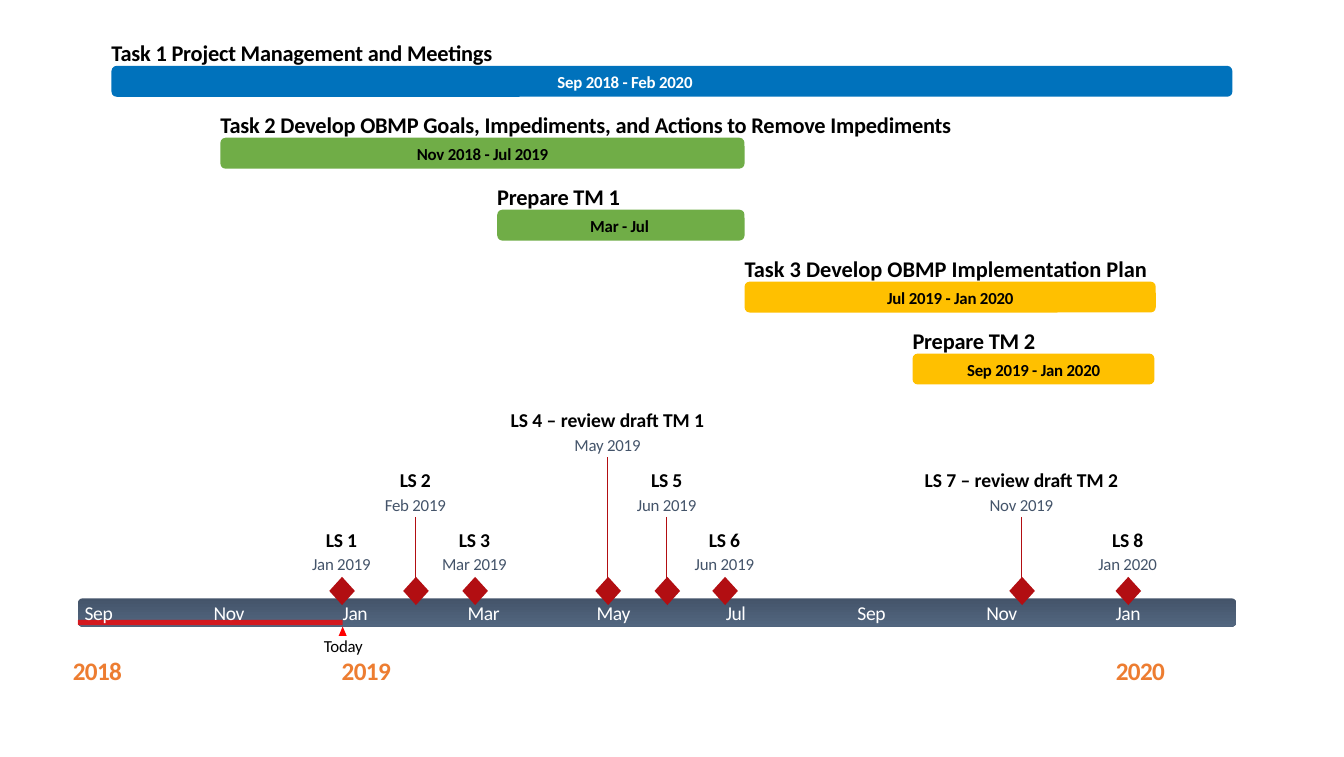
from typing import NamedTuple

from lxml import etree
from pptx import Presentation
from pptx.dml.color import RGBColor
from pptx.enum.shapes import MSO_CONNECTOR, MSO_SHAPE
from pptx.enum.text import MSO_ANCHOR, MSO_AUTO_SIZE, PP_ALIGN
from pptx.oxml.ns import qn
from pptx.shapes.autoshape import Shape
from pptx.slide import Slide
from pptx.util import Inches, Pt

STRAIGHT = MSO_CONNECTOR.STRAIGHT
ROUNDED = MSO_SHAPE.ROUNDED_RECTANGLE
DIAMOND = MSO_SHAPE.DIAMOND
TRIANGLE = MSO_SHAPE.ISOSCELES_TRIANGLE
MIDDLE = MSO_ANCHOR.MIDDLE
FIT = MSO_AUTO_SIZE.SHAPE_TO_FIT_TEXT
FIXED = MSO_AUTO_SIZE.NONE
LEFT = PP_ALIGN.LEFT
CENTER = PP_ALIGN.CENTER

BLACK = RGBColor(0x00, 0x00, 0x00)
WHITE = RGBColor(0xFF, 0xFF, 0xFF)
SLATE = RGBColor(0x44, 0x54, 0x6A)
LIGHT_SLATE = RGBColor(0x52, 0x66, 0x7F)
ORANGE = RGBColor(0xED, 0x7D, 0x31)
RED = RGBColor(0xFF, 0x00, 0x00)
DARK_RED = RGBColor(0xB2, 0x0E, 0x12)
BLUE = RGBColor(0x00, 0x72, 0xBC)
GREEN = RGBColor(0x70, 0xAD, 0x47)
YELLOW = RGBColor(0xFF, 0xC0, 0x00)

FONT = "Calibri"
FIRST_BAR_TOP = 0.49
BAR_PITCH = 0.535
BAR_HEIGHT = 0.23
NAME_TOP = 3.92
LEVEL_HEIGHT = 0.445
DIAMOND_MIDDLE = 4.4


class TextStyle(NamedTuple):
    size: float
    color: RGBColor
    bold: bool = False
    align: PP_ALIGN = CENTER
    spacing: int = -10
    wrap: bool = True
    fit: bool = True


class Task(NamedTuple):
    title: str
    title_width: float
    title_spacing: int
    dates: str
    left: float
    width: float
    dates_center: float
    fill: RGBColor
    text_color: RGBColor


class Milestone(NamedTuple):
    name: str
    date: str
    center: float
    level: int
    name_width: float = 0.78
    spacing: int = -10


class Label(NamedTuple):
    text: str
    left: float
    width: float


TASKS = [
    Task("Task 1 Project Management and Meetings", 2.9, -10,
         "Sep 2018 - Feb 2020", 0.83, 8.34, 4.65, BLUE, WHITE),
    Task("Task 2 Develop OBMP Goals, Impediments, and Actions to Remove Impediments", 5.56, -10,
         "Nov 2018 - Jul 2019", 1.64, 3.9, 3.59, GREEN, BLACK),
    Task("Prepare TM 1", 5.56, -10,
         "Mar - Jul", 3.7, 1.84, 4.61, GREEN, BLACK),
    Task("Task 3 Develop OBMP Implementation Plan", 3, 0,
         "Jul 2019 - Jan 2020", 5.54, 3.06, 7.07, YELLOW, BLACK),
    Task("Prepare TM 2", 1.8, -10,
         "Sep 2019 - Jan 2020", 6.79, 1.8, 7.69, YELLOW, BLACK),
]

MILESTONES = [
    Milestone("LS 1", "Jan 2019", 2.54, 0),
    Milestone("LS 2", "Feb 2019", 3.09, 1),
    Milestone("LS 3", "Mar 2019", 3.53, 0),
    Milestone("LS 4 – review draft TM 1", "May 2019", 4.52, 2, 2.04, 0),
    Milestone("LS 5", "Jun 2019", 4.96, 1),
    Milestone("LS 6", "Jun 2019", 5.39, 0),
    Milestone("LS 8", "Jan 2020", 8.39, 0),
    Milestone("LS 7 – review draft TM 2", "Nov 2019", 7.6, 1, 2.04, 0),
]

MONTHS = [
    Label("Sep", 0.63, 0.21), Label("Nov", 1.59, 0.23), Label("Jan", 2.55, 0.19),
    Label("Mar", 3.48, 0.25), Label("May", 4.44, 0.26), Label("Jul", 5.4, 0.15),
    Label("Sep", 6.38, 0.21), Label("Nov", 7.34, 0.23), Label("Jan", 8.3, 0.19),
]

YEARS = [Label("2018", 0.54, 0.37), Label("2019", 2.54, 0.37), Label("2020", 8.3, 0.37)]

MONTH_STYLE = TextStyle(10.5, WHITE, align=LEFT, spacing=-20, wrap=False, fit=False)
YEAR_STYLE = TextStyle(13.5, ORANGE, bold=True, spacing=-30, wrap=False)
TODAY_STYLE = TextStyle(9, BLACK, wrap=False)
DATE_STYLE = TextStyle(9, SLATE)


def add_text(slide: Slide, text: str, left: float, top: float, width: float,
             height: float, style: TextStyle) -> None:
    box = slide.shapes.add_textbox(Inches(left), Inches(top), Inches(width), Inches(height))
    frame = box.text_frame
    frame.margin_left = frame.margin_right = frame.margin_top = frame.margin_bottom = 0
    frame.vertical_anchor = MIDDLE
    frame.word_wrap = style.wrap
    frame.auto_size = FIT if style.fit else FIXED
    paragraph = frame.paragraphs[0]
    paragraph.text = text
    paragraph.alignment = style.align
    font = paragraph.font
    font.name = FONT
    font.size = Pt(style.size)
    font.bold = style.bold
    font.color.rgb = style.color
    paragraph._p.pPr.find(qn("a:defRPr")).set("spc", str(style.spacing))


def add_filled(slide: Slide, kind: MSO_SHAPE, left: float, top: float, width: float,
               height: float, fill: RGBColor) -> Shape:
    shape = slide.shapes.add_shape(kind, Inches(left), Inches(top), Inches(width), Inches(height))
    shape.shadow.inherit = False
    shape.fill.solid()
    shape.fill.fore_color.rgb = fill
    shape.line.fill.background()
    return shape


def add_stem(slide: Slide, milestone: Milestone) -> None:
    top = NAME_TOP - milestone.level * LEVEL_HEIGHT + 0.37
    center = Inches(milestone.center)
    stem = slide.shapes.add_connector(STRAIGHT, center, Inches(top), center, Inches(DIAMOND_MIDDLE))
    stem.line.color.rgb = DARK_RED
    stem.line.width = Pt(0.75)
    etree.SubElement(stem._element.spPr, qn("a:effectLst"))


def add_timeline(slide: Slide) -> None:
    band = add_filled(slide, ROUNDED, 0.58, 4.45, 8.62, 0.21, SLATE)
    band.fill.gradient()
    band.fill.gradient_angle = 270
    for stop, color, position in zip(band.fill.gradient_stops, (SLATE, LIGHT_SLATE), (0, 1)):
        stop.color.rgb = color
        stop.position = position

    elapsed = add_filled(slide, ROUNDED, 0.58, 4.61, 1.97, 0.04, RED)
    color_element = elapsed._element.spPr.find(qn("a:solidFill")).find(qn("a:srgbClr"))
    etree.SubElement(color_element, qn("a:alpha"), val="75000")

    add_filled(slide, TRIANGLE, 2.52, 4.66, 0.06, 0.07, RED)
    add_text(slide, "Today", 2.4, 4.73, 0.31, 0.15, TODAY_STYLE)
    for month in MONTHS:
        add_text(slide, month.text, month.left, 4.48, month.width, 0.15, MONTH_STYLE)
    for year in YEARS:
        add_text(slide, year.text, year.left, 4.87, year.width, 0.23, YEAR_STYLE)


def add_milestone(slide: Slide, milestone: Milestone) -> None:
    top = NAME_TOP - milestone.level * LEVEL_HEIGHT
    name_style = TextStyle(10.5, BLACK, bold=True, spacing=milestone.spacing)
    add_text(slide, milestone.name, milestone.center - milestone.name_width / 2, top,
             milestone.name_width, 0.18, name_style)
    add_text(slide, milestone.date, milestone.center - 0.25, top + 0.2, 0.5, 0.15, DATE_STYLE)
    add_filled(slide, DIAMOND, milestone.center - 0.09, 4.29, 0.19, 0.21, DARK_RED)


def add_task(slide: Slide, task: Task, row: int) -> None:
    top = FIRST_BAR_TOP + row * BAR_PITCH
    add_filled(slide, ROUNDED, task.left, top, task.width, BAR_HEIGHT, task.fill)
    title_style = TextStyle(12, BLACK, bold=True, align=LEFT, spacing=task.title_spacing)
    add_text(slide, task.title, task.left, top - 0.2, task.title_width, 0.2, title_style)
    dates_style = TextStyle(9, task.text_color, bold=True, fit=False)
    add_text(slide, task.dates, task.dates_center - 0.6, top + 0.02, 1.2, 0.2, dates_style)


def main() -> None:
    presentation = Presentation()
    presentation.slide_width = Inches(10)
    presentation.slide_height = Inches(5.63)
    slide = presentation.slides.add_slide(presentation.slide_layouts[6])
    for milestone in MILESTONES:
        if milestone.level:
            add_stem(slide, milestone)
    add_timeline(slide)
    for milestone in MILESTONES:
        add_milestone(slide, milestone)
    for row, task in enumerate(TASKS):
        add_task(slide, task, row)
    presentation.save("out.pptx")


if __name__ == "__main__":
    main()
